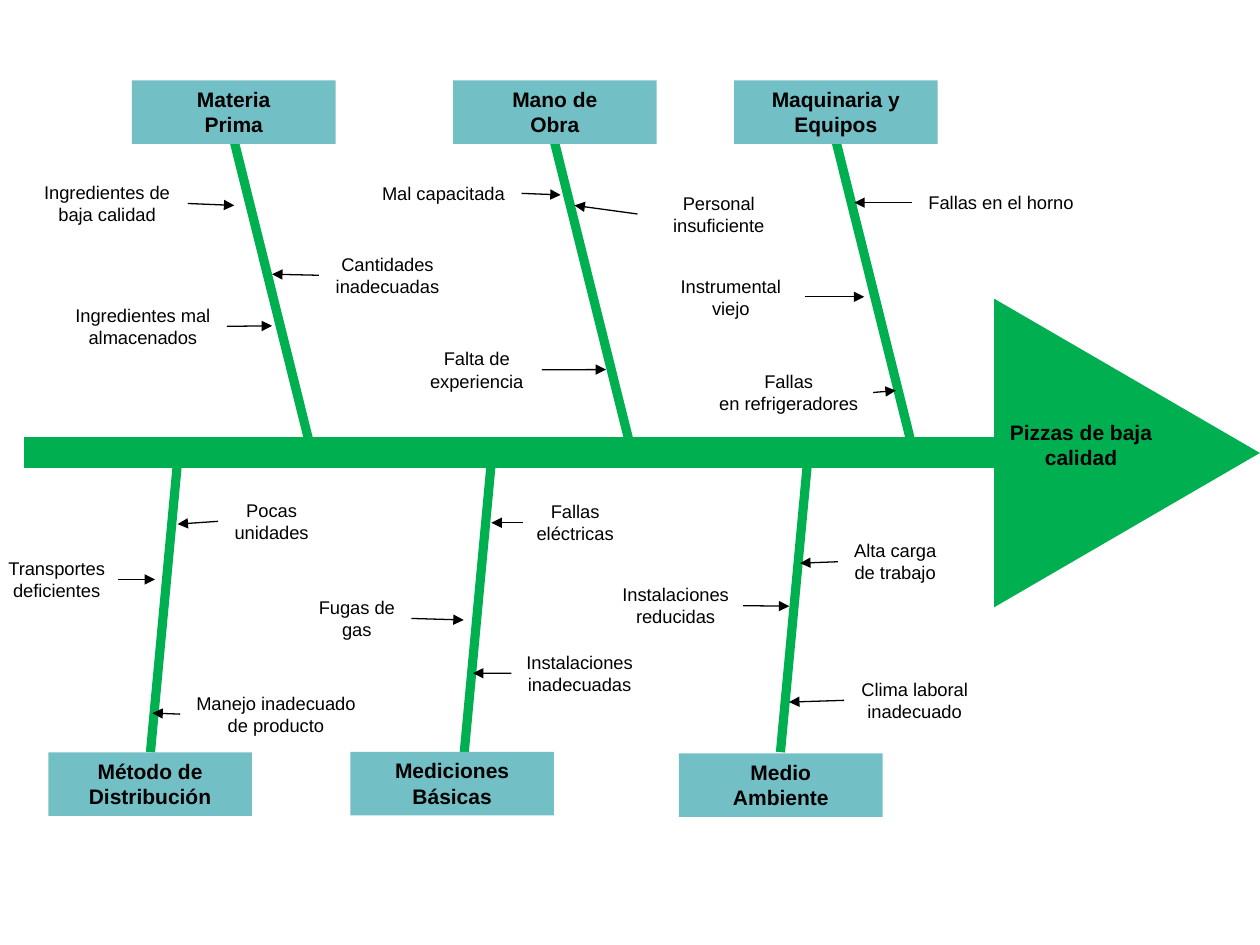
from pptx import Presentation
from pptx.dml.color import RGBColor
from pptx.enum.shapes import MSO_CONNECTOR, MSO_SHAPE
from pptx.enum.text import MSO_ANCHOR, MSO_AUTO_SIZE, PP_ALIGN
from pptx.oxml.ns import qn
from pptx.util import Pt
from lxml.etree import SubElement

GREEN, TEAL, BLACK = [RGBColor.from_string(c) for c in ("00B050", "72BFC5", "000000")]

deck = Presentation()
deck.slide_width, deck.slide_height = Pt(720), Pt(540)
slide = deck.slides.add_slide(deck.slide_layouts[6])
shapes = slide.shapes


def draw_line(x1, y1, x2, y2, color, width, arrow=False):
    line = shapes.add_connector(MSO_CONNECTOR.STRAIGHT, Pt(x1), Pt(y1), Pt(x2), Pt(y2))
    line.line.color.rgb = color
    line.line.width = Pt(width)
    if arrow:
        SubElement(line.line._get_or_add_ln(), qn("a:tailEnd"), type="triangle")
    SubElement(line._element.spPr, qn("a:effectLst"))


def put_text(shape, text, size, bold=False):
    frame = shape.text_frame
    frame.word_wrap = True
    frame.auto_size = MSO_AUTO_SIZE.SHAPE_TO_FIT_TEXT
    frame.vertical_anchor = MSO_ANCHOR.TOP
    frame.text = text
    for par in frame.paragraphs:
        par.alignment = PP_ALIGN.CENTER
        par.font.name = "Arial"
        par.font.size = Pt(size)
        par.font.bold = bold
        par.font.color.rgb = BLACK


# Spine and head of the fish
draw_line(13.7, 258.5, 648.7, 258.5, GREEN, 18)
head = shapes.add_shape(MSO_SHAPE.ISOSCELES_TRIANGLE, Pt(555.8), Pt(182.9), Pt(176.4), Pt(151.9))
head.rotation = 90
head.shadow.inherit = False
head.fill.solid()
head.fill.fore_color.rgb = GREEN
head.line.fill.background()

# Bones: upper ones lean right, lower ones lean left
for x in (477.8, 316.8, 133.9):
    draw_line(x, 81, x + 43.2, 254.2, GREEN, 5.25)
for x in (461.5, 280.8, 101.5):
    draw_line(x, 263.5, x - 15.5, 429.8, GREEN, 5.25)

# Categories: text, left, top
groups = [
    ("Maquinaria y Equipos", 419.5, 45.9),
    ("Mano de\nObra", 258.9, 45.9),
    ("Materia\nPrima", 75.4, 45.9),
    ("Método de Distribución", 27.6, 429.9),
    ("Mediciones\nBásicas", 200.2, 429.6),
    ("Medio\nAmbiente", 388, 430.5),
]
for text, x, y in groups:
    box = shapes.add_shape(MSO_SHAPE.RECTANGLE, Pt(x), Pt(y), Pt(116.4), Pt(36.3))
    box.shadow.inherit = False
    box.fill.solid()
    box.fill.fore_color.rgb = TEAL
    box.line.fill.background()
    put_text(box, text, 12, True)

# Effect
label = shapes.add_textbox(Pt(565.2), Pt(236.2), Pt(105.1), Pt(36.3))
put_text(label, "Pizzas de baja calidad", 12, True)

# Causes: text, left, top, width, height, arrow tip x and y
ONE, TWO = 20, 32.4
causes = [
    ("Fallas en el horno", 521.3, 105.8, 101.5, ONE, 488.2, 115.8),
    ("Fallas\nen refrigeradores", 402.5, 208.1, 96.5, TWO, 511.9, 223.2),
    ("Instrumental viejo", 375.1, 153.4, 85, TWO, 493.9, 169.6),
    ("Mal capacitada", 208.8, 100.5, 89.3, ONE, 320.4, 111.4),
    ("Personal insuficiente", 364.3, 106.1, 92.9, TWO, 328.3, 117.4),
    ("Falta de experiencia", 235.4, 195.1, 74.2, TWO, 346.3, 211.2),
    ("Ingredientes de baja calidad", 15.1, 100.1, 92.2, TWO, 133.9, 117.4),
    ("Ingredientes mal almacenados", 33.8, 170.3, 95.8, TWO, 155.5, 186.2),
    ("Cantidades inadecuadas", 182.2, 141.1, 78.5, TWO, 155.5, 156.7),
    ("Pocas unidades", 124.6, 281.7, 61.2, TWO, 101.5, 299.5),
    ("Manejo inadecuado de producto", 103, 391.9, 109.4, TWO, 87.1, 407.5),
    ("Transportes deficientes", -2.9, 314.9, 70.6, TWO, 88.6, 331.1),
    ("Fallas eléctricas", 298.8, 282.5, 59.8, TWO, 280.8, 298.7),
    ("Instalaciones inadecuadas", 292.3, 368.6, 77.8, TWO, 270.3, 384.7),
    ("Fugas de gas", 172.8, 337.2, 62.3, TWO, 265, 354.3),
    ("Clima laboral inadecuado", 482.4, 384, 80.6, TWO, 450.9, 401.2),
    ("Alta carga de trabajo", 478.8, 304.8, 65.5, TWO, 457.2, 321.8),
    ("Instalaciones reducidas", 347.6, 329.9, 77, TWO, 451, 346.4),
]
for text, x, y, wide, high, tip, level in causes:
    note = shapes.add_textbox(Pt(x), Pt(y), Pt(wide), Pt(high))
    put_text(note, text, 10.5)
    start = x if tip < x else x + wide
    draw_line(start, y + high / 2, tip, level, BLACK, 0.75, arrow=True)

deck.save("out.pptx")
